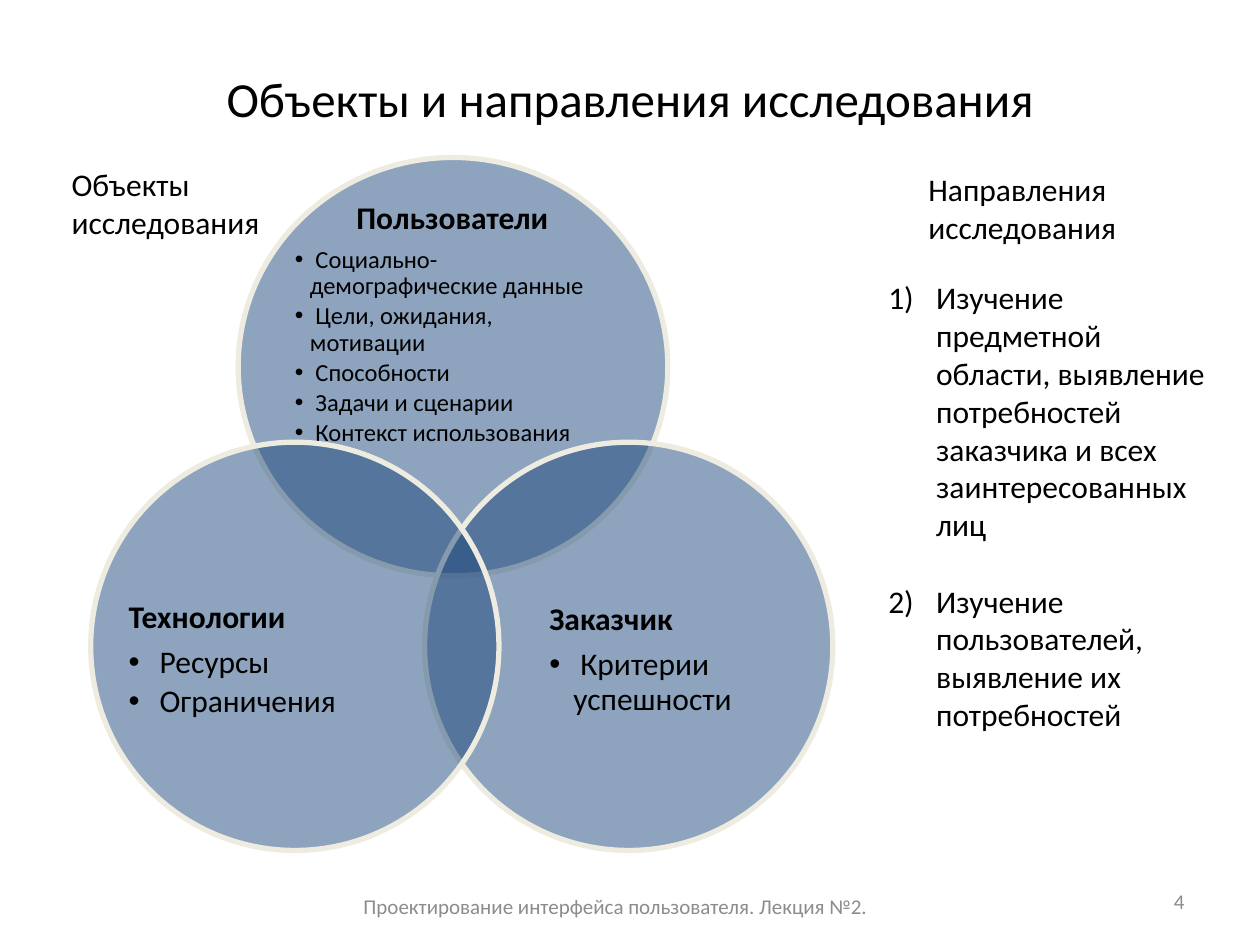
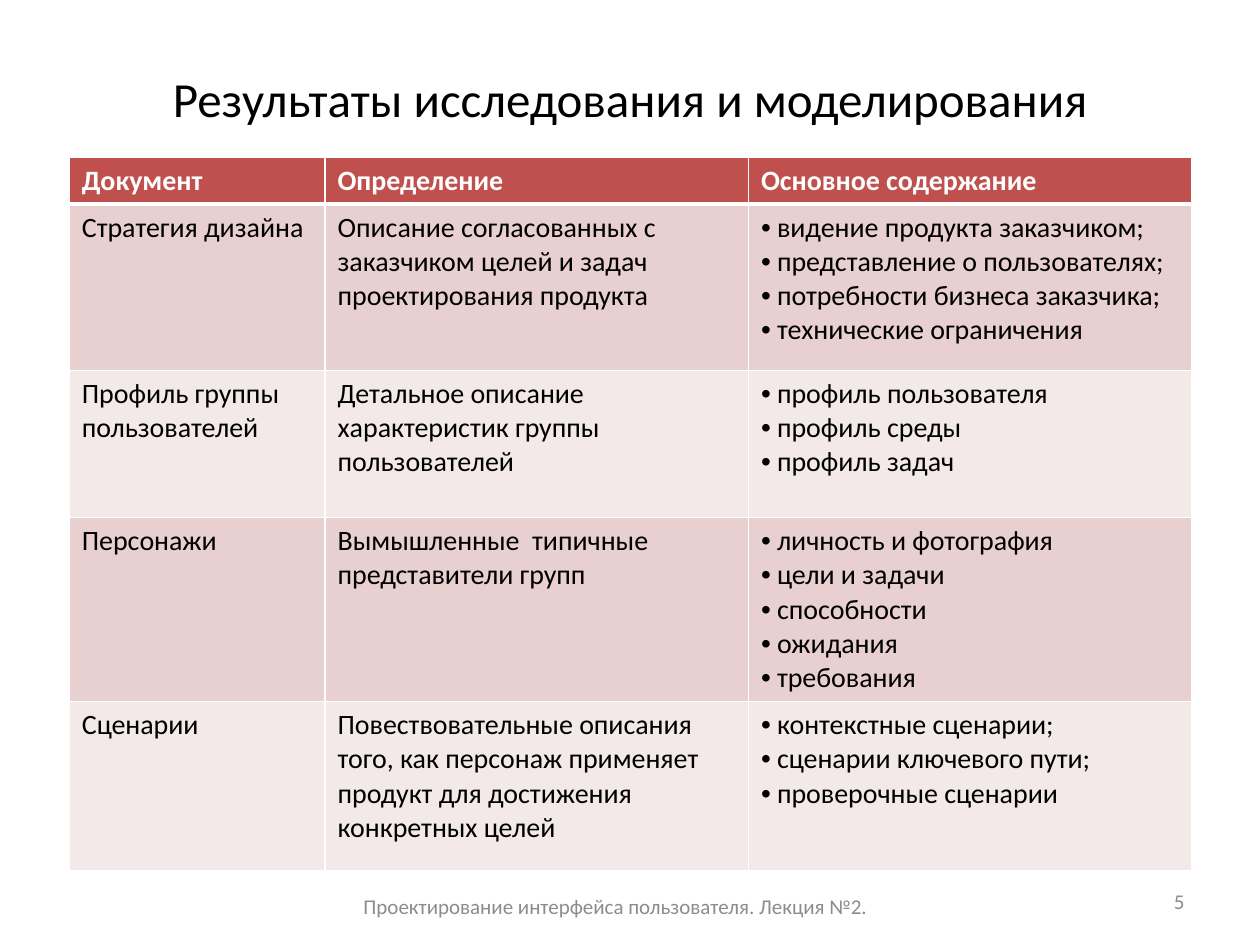
from lxml import etree
from pptx import Presentation
from pptx.dml.color import RGBColor
from pptx.enum import shapes, text
from pptx.oxml import ns
from pptx.util import Inches, Pt

# Shared style
FONT = "Calibri"
BLACK, WHITE, GREY = "000000", "FFFFFF", "8C8C8C"
NAVY, CREAM = "1F497D", "EEECE1"
RED, ROSE, PALE_ROSE = "C0504D", "E8D0D0", "F4E9E9"
FOOTER = "Проектирование интерфейса пользователя. Лекция №2."
LEFT, CENTER, RIGHT = text.PP_ALIGN.LEFT, text.PP_ALIGN.CENTER, text.PP_ALIGN.RIGHT
MIDDLE, TOP = text.MSO_ANCHOR.MIDDLE, text.MSO_ANCHOR.TOP

# Circle box and text box, both relative to the diagram; heading alignment,
# bullet indent, bullet size, heading, bullets
CIRCLES = [
    ((1.17, 0, 3.41, 3.32), (1.62, 0.58, 2.5, 1.49), CENTER, 0.12, 14, "Пользователи",
     ["Социально-демографические данные", "Цели, ожидания, мотивации",
      "Способности", "Задачи и сценарии", "Контекст использования"]),
    ((2.65, 2.26, 3.24, 3.24), (3.64, 3.1, 1.95, 1.78), LEFT, 0.19, 18, "Заказчик",
     ["Критерии успешности"]),
    ((0, 2.26, 3.24, 3.24), (0.3, 3.1, 1.95, 1.78), LEFT, 0.19, 18, "Технологии",
     ["Ресурсы", "Ограничения"]),
]
DIRECTIONS = [
    "Изучение предметной области, выявление потребностей заказчика и всех "
    "заинтересованных лиц",
    "Изучение пользователей, выявление их потребностей",
]
HEADINGS = ["Документ", "Определение", "Основное содержание"]
DOCUMENTS = [
    ("Стратегия дизайна",
     "Описание согласованных с заказчиком целей и задач проектирования продукта",
     ["видение продукта заказчиком;", "представление о пользователях;",
      "потребности бизнеса заказчика;", "технические ограничения"]),
    ("Профиль группы пользователей",
     "Детальное описание характеристик группы пользователей",
     ["профиль пользователя", "профиль среды", "профиль задач"]),
    ("Персонажи",
     "Вымышленные  типичные представители групп",
     ["личность и фотография", "цели и задачи", "способности", "ожидания", "требования"]),
    ("Сценарии",
     "Повествовательные описания того, как персонаж применяет продукт для достижения "
     "конкретных целей",
     ["контекстные сценарии;", "сценарии ключевого пути;", "проверочные сценарии"]),
]
COLUMN_WIDTHS = [2.03, 3.36, 3.52]
ROW_HEIGHTS = [0.37, 1.32, 1.17, 1.46, 1.34]


def rgb(value):
    return RGBColor.from_string(value)


def sub(parent, tag, **attributes):
    return etree.SubElement(parent, ns.qn(tag), attributes)


def place(shape, box):
    shape.left, shape.top, shape.width, shape.height = (Inches(v) for v in box)


def shift(box, origin):
    return (box[0] + origin[0], box[1] + origin[1], box[2], box[3])


def paragraphs(frame):
    """Yield the frame's first paragraph, then new ones."""
    yield frame.paragraphs[0]
    while True:
        yield frame.add_paragraph()


def write(paragraph, words, size, color=BLACK, bold=False, align=LEFT):
    paragraph.alignment = align
    run = paragraph.add_run()
    run.text = words
    run.font.name, run.font.size, run.font.bold = FONT, Pt(size), bold
    run.font.color.rgb = rgb(color)


def add_bullet(paragraph, indent=0, numbered=False):
    properties = paragraph._p.get_or_add_pPr()
    properties.set("marL", str(Inches(indent)))
    properties.set("indent", str(-Inches(indent)))
    if numbered:
        sub(properties, "a:buFont", typeface="+mj-lt")
        sub(properties, "a:buAutoNum", type="arabicParenR")
    else:
        sub(properties, "a:buFont", typeface="Arial")
        sub(properties, "a:buChar", char="•")


def add_frame(parent, box, inset=True):
    textbox = parent.add_textbox(*(Inches(v) for v in box))
    frame = textbox.text_frame
    frame.word_wrap, frame.vertical_anchor = True, MIDDLE
    if not inset:
        frame.margin_left = frame.margin_top = frame.margin_right = frame.margin_bottom = 0
    return frame


def add_label(slide, box, words, size=18, color=BLACK, align=LEFT):
    write(add_frame(slide.shapes, box).paragraphs[0], words, size, color, align=align)


def add_slide(prs, layout, title, number):
    """Add a slide with the common title, footer and number."""
    slide = prs.slides.add_slide(prs.slide_layouts[layout])
    heading = slide.shapes.title
    place(heading, (0.5, 0.3, 9, 0.95))
    heading.text_frame.vertical_anchor = MIDDLE
    write(heading.text_frame.paragraphs[0], title, 28, align=CENTER)
    add_label(slide, (7.17, 6.95, 2.33, 0.4), str(number), 12, GREY, RIGHT)
    add_label(slide, (2.19, 7.03, 5.39, 0.32), FOOTER, 12, GREY, CENTER)
    return slide


def add_circle(parent, box):
    circle = parent.add_shape(shapes.MSO_SHAPE.OVAL, *(Inches(v) for v in box))
    circle.shadow.inherit = False
    circle.fill.solid()
    circle.fill.fore_color.rgb = rgb(NAVY)
    # Half-transparent fill
    color = circle._element.spPr.find(ns.qn("a:solidFill")).find(ns.qn("a:srgbClr"))
    sub(color, "a:alpha", val="50000")
    circle.line.color.rgb = rgb(CREAM)
    circle.line.width = Pt(3)


def add_venn(slide, origin):
    """Three overlapping circles, each with a heading and bullets."""
    group = slide.shapes.add_group_shape().shapes
    for circle, caption, align, indent, size, heading, items in CIRCLES:
        add_circle(group, shift(circle, origin))
        lines = paragraphs(add_frame(group, shift(caption, origin), inset=False))
        first = next(lines)
        write(first, heading, 18, bold=True, align=align)
        first.line_spacing, first.space_after = 0.9, Pt(0.35 * 18)
        for item, line in zip(items, lines):
            write(line, " " + item, size)
            line.level = 1
            line.line_spacing, line.space_after = 0.9, Pt(0.15 * size)
            add_bullet(line, indent)


def fill_directions(body, box):
    """Numbered list in the body placeholder."""
    place(body, box)
    frame = body.text_frame
    frame.auto_size, frame.vertical_anchor = text.MSO_AUTO_SIZE.NONE, TOP
    for index, (item, line) in enumerate(zip(DIRECTIONS, paragraphs(frame))):
        write(line, item, 18)
        line.space_before = Pt(22 if index else 0)
        add_bullet(line, 0.38, numbered=True)


def format_cell(cell, fill, bottom_width):
    properties = cell._tc.get_or_add_tcPr()
    for side, width in (("L", 1), ("R", 1), ("T", 1), ("B", bottom_width)):
        border = sub(properties, "a:ln" + side, w=str(Pt(width)))
        sub(sub(border, "a:solidFill"), "a:srgbClr", val=WHITE)
    cell.fill.solid()
    cell.fill.fore_color.rgb = rgb(fill)


def add_documents_table(slide, left, top):
    size = (sum(COLUMN_WIDTHS), sum(ROW_HEIGHTS))
    table = slide.shapes.add_table(len(ROW_HEIGHTS), len(COLUMN_WIDTHS),
                                   *(Inches(v) for v in (left, top, *size))).table
    for column, width in zip(table.columns, COLUMN_WIDTHS):
        column.width = Inches(width)
    for row, height in zip(table.rows, ROW_HEIGHTS):
        row.height = Inches(height)

    # Header row
    for column, heading in enumerate(HEADINGS):
        cell = table.cell(0, column)
        format_cell(cell, RED, 3)
        write(cell.text_frame.paragraphs[0], heading, 16, WHITE, bold=True)

    # Banded document rows
    for row, (document, definition, contents) in enumerate(DOCUMENTS, 1):
        cells = [table.cell(row, column) for column in range(len(HEADINGS))]
        for cell in cells:
            format_cell(cell, ROSE if row % 2 else PALE_ROSE, 1)
        for cell, words in zip(cells, (document, definition)):
            write(cell.text_frame.paragraphs[0], words, 16)
        for item, line in zip(contents, paragraphs(cells[2].text_frame)):
            write(line, " " + item, 16)
            add_bullet(line)


def build_research_slide(prs):
    slide = add_slide(prs, 1, "Объекты и направления исследования", 4)
    add_venn(slide, (0.72, 1.25))
    add_label(slide, (0.47, 1.22, 1.95, 0.78), "Объекты исследования")
    add_label(slide, (7.27, 1.22, 1.8, 0.86), "Направления исследования")
    fill_directions(slide.placeholders[1], (6.95, 2.16, 2.81, 3.74))


def build_results_slide(prs):
    slide = add_slide(prs, 5, "Результаты исследования и моделирования", 5)
    add_documents_table(slide, 0.55, 1.25)


def main():
    prs = Presentation()
    prs.slide_width, prs.slide_height = Inches(10), Inches(7.5)
    build_research_slide(prs)
    build_results_slide(prs)
    prs.save("out.pptx")


if __name__ == "__main__":
    main()
